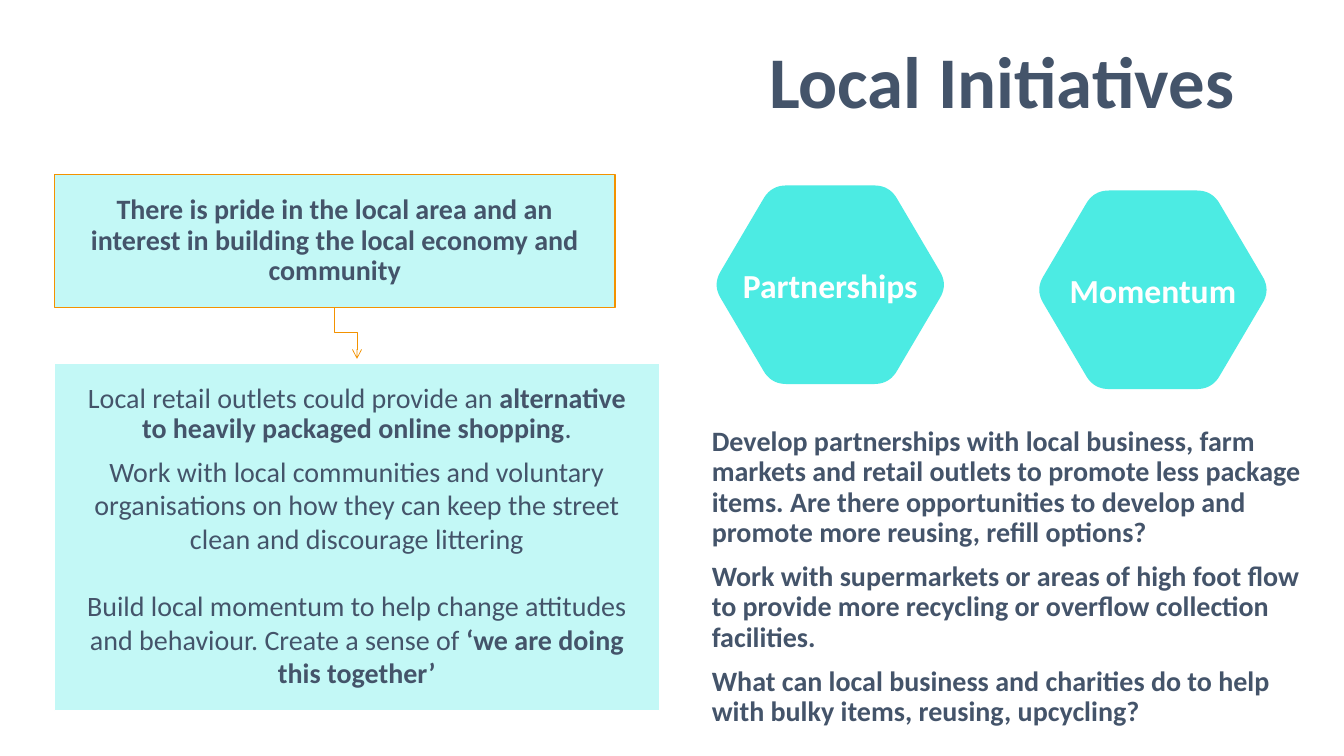
from math import dist
from lxml.etree import SubElement
from pptx import Presentation
from pptx.dml.color import RGBColor
from pptx.enum.shapes import MSO_CONNECTOR as CONN, MSO_SHAPE as SHAPE
from pptx.enum.text import MSO_ANCHOR as ANCHOR, MSO_AUTO_SIZE as FIT, PP_ALIGN as ALIGN
from pptx.oxml.ns import qn
from pptx.util import Inches, Pt

SLATE = RGBColor(0x44, 0x54, 0x6A)
AQUA = RGBColor(0x4C, 0xEB, 0xE3)
PALE = RGBColor(0xC3, 0xF8, 0xF6)
ORANGE = RGBColor(0xF3, 0x92, 0x00)
WHITE = RGBColor(0xFF, 0xFF, 0xFF)

LEFT, RIGHT = 0.54, 6.96


def write(sp, paragraphs, size, color, align, anchor, inset=(0.1, 0.05)):
    tf = sp.text_frame
    frame = dict(word_wrap=True, auto_size=FIT.NONE, vertical_anchor=anchor,
                 margin_left=Inches(inset[0]), margin_right=Inches(inset[0]),
                 margin_top=Inches(inset[1]), margin_bottom=Inches(inset[1]))
    for name, value in frame.items():
        setattr(tf, name, value)
    for i, (runs, spacing) in enumerate(paragraphs):
        p = tf.paragraphs[0] if i == 0 else tf.add_paragraph()
        p.alignment = align
        for name, value in spacing.items():
            setattr(p, name, value)
        for text, bold in runs:
            r = p.add_run()
            r.text = text
            r.font.color.rgb = color
            for name, value in dict(name="Calibri", size=Pt(size), bold=bold).items():
                setattr(r.font, name, value)


def rounded_hexagon(left, top, width=2.33, height=1.97, slant=0.58, cut=0.15):
    mid, right, bottom = top + height / 2, left + width, top + height
    corners = [(left + slant, top), (right - slant, top), (right, mid),
               (right - slant, bottom), (left + slant, bottom), (left, mid)]
    points = []
    for i, corner in enumerate(corners):
        ends = []
        for other in (corners[i - 1], corners[(i + 1) % 6]):
            share = cut / dist(corner, other)
            ends.append([c + (o - c) * share for c, o in zip(corner, other)])
        for t in (step / 10 for step in range(11)):
            points.append([Inches((1 - t) ** 2 * a + 2 * t * (1 - t) * c + t ** 2 * b)
                           for a, c, b in zip(ends[0], corner, ends[1])])
    builder = s.shapes.build_freeform(*points[0])
    builder.add_line_segments(points[1:], close=True)
    return builder.convert_to_shape()


prs = Presentation()
prs.slide_width, prs.slide_height = Inches(13.33), Inches(7.5)
s = prs.slides.add_slide(prs.slide_layouts[1])
title, body = s.placeholders

for sp, box in ((title, (RIGHT, 0.22, 5.95, 1.24)), (body, (RIGHT, 4.19, 6.1, 3.11))):
    for name, value in zip(("left", "top", "width", "height"), box):
        setattr(sp, name, Inches(value))

write(title, [([("Local Initiatives", True)], dict(line_spacing=0.9))],
      52, SLATE, ALIGN.CENTER, ANCHOR.MIDDLE)

ideas = [
    "Develop partnerships with local business, farm markets and retail outlets to promote less package items. Are there opportunities to develop and promote more reusing, refill options?",
    "Work with supermarkets or areas of high foot flow to provide more recycling or overflow collection facilities.",
    "What can local business and charities do to help with bulky items, reusing, upcycling?",
]
write(body, [([(idea, True)], dict(line_spacing=0.9, space_before=Pt(10))) for idea in ideas],
      20, SLATE, ALIGN.LEFT, ANCHOR.TOP)
for p in body.text_frame.paragraphs:
    pPr = p._p.get_or_add_pPr()
    pPr.set("marL", "0")
    pPr.set("indent", "0")
    SubElement(pPr, qn("a:buNone"))

for label, left, top in (("Partnerships", 7.07, 1.84), ("Momentum", 10.27, 1.89)):
    sp = rounded_hexagon(left, top)
    sp.shadow.inherit = False
    sp.fill.solid()
    sp.fill.fore_color.rgb = AQUA
    sp.line.fill.background()
    write(sp, [([(label, True)], dict(space_after=Pt(6)))],
          24, WHITE, ALIGN.CENTER, ANCHOR.MIDDLE, (0.03, 0.03))

mid_x, mid_y, run, rise = 3.43, 3.3, 0.22, 0.52
arrow = s.shapes.add_connector(CONN.ELBOW, Inches(mid_x + rise / 2), Inches(mid_y - run / 2),
                               Inches(mid_x - rise / 2), Inches(mid_y + run / 2))
arrow.line.color.rgb = ORANGE
arrow.line.width = Pt(0.5)
spPr = arrow._element.spPr
spPr.find(qn("a:xfrm")).set("rot", "16200000")
SubElement(spPr.find(qn("a:ln")), qn("a:tailEnd"), type="arrow")
SubElement(spPr, qn("a:effectLst"))

tight = dict(line_spacing=0.9, space_after=Pt(7))
pride = [([("There is pride in the local area and an interest in building the local economy and community", True)], tight)]
actions = [
    ([("Local retail outlets could provide an ", False),
      ("alternative to heavily packaged online shopping", True), (".", False)], tight),
    ([("Work with local communities and voluntary organisations on how they can keep the street clean and discourage littering", False)], {}),
    ([("Build local momentum to help change attitudes and behaviour. Create a sense of ", False),
      ("‘we are doing this together’", True)], dict(space_before=Pt(24))),
]
for paragraphs, top, width, height, edge in ((pride, 1.73, 5.56, 1.32, ORANGE),
                                             (actions, 3.6, 6, 3.45, WHITE)):
    sp = s.shapes.add_shape(SHAPE.RECTANGLE, *map(Inches, (LEFT, top, width, height)))
    sp.shadow.inherit = False
    sp.fill.solid()
    sp.fill.fore_color.rgb = PALE
    sp.line.color.rgb = edge
    sp.line.width = Pt(1)
    write(sp, paragraphs, 20, SLATE, ALIGN.CENTER, ANCHOR.MIDDLE, (0.19, 0.2))

prs.save("out.pptx")
